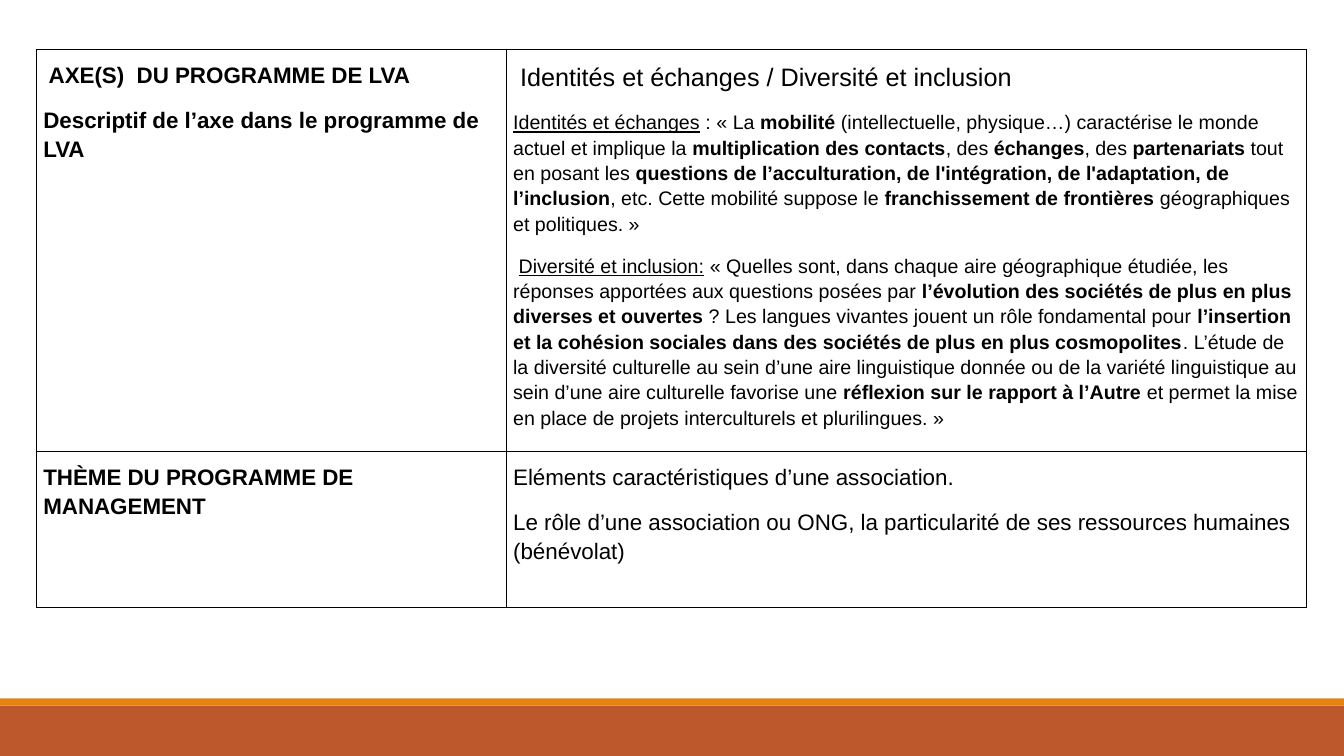
"""Builds the slide linking the LVA programme axes to the management theme."""
from lxml import etree
from pptx import Presentation
from pptx.dml.color import RGBColor
from pptx.enum import shapes
from pptx.oxml import ns
from pptx.util import Inches, Pt

BLACK = RGBColor(0x00, 0x00, 0x00)
RUST = RGBColor(0xBD, 0x58, 0x2C)
ORANGE = RGBColor(0xE4, 0x83, 0x12)
FONT = "Arial"
COLUMN_WIDTHS = (4.66, 7.94)
ROW_HEIGHTS = (3.99, 1.55)

AXES_TITLE = [
    (16, "* AXE(S)  DU PROGRAMME DE LVA*"),
    (16, "*Descriptif de l’axe dans le programme de LVA*"),
]
AXES_DETAIL = [
    (18, " Identités et échanges / Diversité et inclusion"),
    (14, "_Identités et échanges_ : « La *mobilité *(intellectuelle, physique…) "
         "caractérise le monde actuel et implique la *multiplication des contacts*, "
         "des *échanges*, des *partenariats* tout en posant les *questions de "
         "l’acculturation, de l'intégration, de l'adaptation, de l’inclusion*, etc. "
         "Cette mobilité suppose le *franchissement de frontières *géographiques "
         "et politiques. »"),
    (14, " _Diversité et inclusion:_ « Quelles sont, dans chaque aire géographique "
         "étudiée, les réponses apportées aux questions posées par *l’évolution des "
         "sociétés de plus en plus diverses et ouvertes* ? Les langues vivantes jouent "
         "un rôle fondamental pour *l’insertion et la cohésion sociales dans des "
         "sociétés de plus en plus cosmopolites*. L’étude de la diversité culturelle "
         "au sein d’une aire linguistique donnée ou de la variété linguistique au sein "
         "d’une aire culturelle favorise une *réflexion sur le rapport à l’Autre* et "
         "permet la mise en place de projets interculturels et plurilingues. »"),
]
THEME_TITLE = [(16, "*THÈME DU PROGRAMME DE MANAGEMENT*")]
THEME_DETAIL = [
    (16, "Eléments caractéristiques d’une association."),
    (16, "Le rôle d’une association ou ONG, la particularité de ses ressources "
         "humaines (bénévolat)"),
]
PROGRAMME = [(AXES_TITLE, AXES_DETAIL), (THEME_TITLE, THEME_DETAIL)]


def add_band(slide, top, height, color):
    """Add a full-width footer band."""
    band = slide.shapes.add_shape(
        shapes.MSO_SHAPE.RECTANGLE, 0, Inches(top), Inches(13.33), Inches(height))
    band.shadow.inherit = False
    band.fill.solid()
    band.fill.fore_color.rgb = color
    band.line.fill.background()


def write_marked_text(paragraph, marked):
    """Write text in which *...* is bold and _..._ is underlined."""
    for i, stretch in enumerate(marked.split("*")):
        for j, words in enumerate(stretch.split("_")):
            if words:
                run = paragraph.add_run()
                run.text = words
                run.font.bold = i % 2 == 1
                run.font.underline = j % 2 == 1


def draw_borders(cell):
    """Draw a thin black line on each side of a cell."""
    properties = cell._tc.get_or_add_tcPr()
    for position, side in enumerate(("lnL", "lnR", "lnT", "lnB")):
        border = etree.Element(ns.qn(f"a:{side}"), w=str(Pt(1)))
        fill = etree.SubElement(border, ns.qn("a:solidFill"))
        etree.SubElement(fill, ns.qn("a:srgbClr"), val=str(BLACK))
        properties.insert(position, border)


def fill_cell(cell, paragraphs):
    """Write a cell's paragraphs and set its margins, fill and borders."""
    cell.margin_left = cell.margin_right = Inches(0.07)
    cell.margin_top = cell.margin_bottom = Inches(0.1)
    cell.fill.background()
    draw_borders(cell)
    frame = cell.text_frame
    for i, (size, marked) in enumerate(paragraphs):
        paragraph = frame.add_paragraph() if i else frame.paragraphs[0]
        paragraph.line_spacing = 1.15
        paragraph.space_before = Pt(12)
        paragraph.font.name = FONT
        paragraph.font.size = Pt(size)
        paragraph.font.color.rgb = BLACK
        write_marked_text(paragraph, marked)
    paragraph.space_after = Pt(12)


def add_programme_table(slide):
    """Add the two-column table of programme headings and details."""
    table = slide.shapes.add_table(
        len(ROW_HEIGHTS), len(COLUMN_WIDTHS), Inches(0.36), Inches(0.49),
        Inches(sum(COLUMN_WIDTHS)), Inches(sum(ROW_HEIGHTS))).table
    table.first_row = table.horz_banding = False
    for column, width in zip(table.columns, COLUMN_WIDTHS):
        column.width = Inches(width)
    for row, height, contents in zip(table.rows, ROW_HEIGHTS, PROGRAMME):
        row.height = Inches(height)
        for cell, paragraphs in zip(row.cells, contents):
            fill_cell(cell, paragraphs)


def main():
    """Build and save the slide."""
    deck = Presentation()
    deck.slide_width, deck.slide_height = Inches(13.33), Inches(7.5)
    slide = deck.slides.add_slide(deck.slide_layouts[6])
    add_band(slide, 7, 0.5, RUST)
    add_band(slide, 6.93, 0.07, ORANGE)
    add_programme_table(slide)
    deck.save("out.pptx")


if __name__ == "__main__":
    main()
